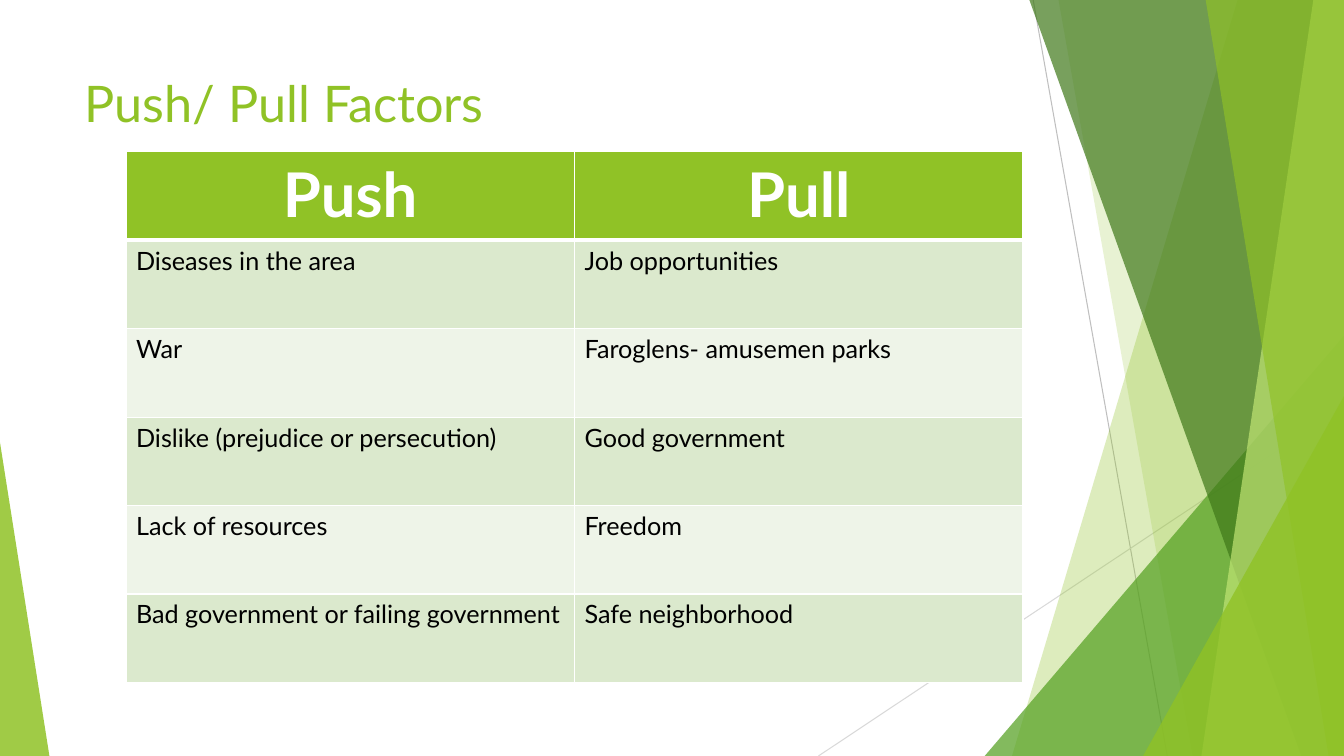
from pptx import Presentation
from pptx.dml.color import RGBColor
from pptx.enum.shapes import MSO_CONNECTOR, MSO_SHAPE
from pptx.enum.text import MSO_ANCHOR, MSO_AUTO_SIZE, PP_ALIGN
from pptx.oxml import parse_xml
from pptx.oxml.ns import nsdecls
from pptx.oxml.xmlchemy import OxmlElement
from pptx.util import Pt

WIDTH, HEIGHT = 960, 540
GREEN = "90C226"
FONT = "Lato"


def paint(fill, colour, opacity=100):
    """Apply a solid fill, with opacity in percent."""
    fill.solid()
    fill.fore_color.rgb = RGBColor.from_string(colour)
    if opacity < 100:
        alpha = OxmlElement("a:alpha")
        alpha.set("val", str(opacity * 1000))
        fill._xPr.find(".//{*}srgbClr").append(alpha)


def style_text(para, size, colour, bold=False):
    for run in para.runs:
        run.font.name = FONT
        run.font.size = Pt(size)
        run.font.bold = bold
        run.font.color.rgb = RGBColor.from_string(colour)


deck = Presentation()
deck.slide_width, deck.slide_height = Pt(WIDTH), Pt(HEIGHT)
page = deck.slides.add_slide(deck.slide_layouts[5])
shapes = page.shapes

# Thin background lines: start, end, colour
for x1, y1, x2, y2, colour in [
    (738, 0, 833.8, HEIGHT, "BFBFBF"),
    (WIDTH, 290.2, 584.6, HEIGHT, "D9D9D9"),
]:
    line = shapes.add_connector(
        MSO_CONNECTOR.STRAIGHT, Pt(x1), Pt(y1), Pt(x2), Pt(y2))
    line.line.width = Pt(0.75)
    line.line.color.rgb = RGBColor.from_string(colour)
    line._element.spPr.append(OxmlElement("a:effectLst"))

# Facets run from a slanted left edge (top x, bottom x) to the right page edge;
# triangles stand on the bottom edge (left, top, width, apex position).
decoration = [
    ("facet", (884.2, 722.9), GREEN, 30),
    ("facet", (756, 851.8), GREEN, 20),
    ("triangle", (703.4, 239.8, 256.6, 1), "54A021", 72),
    ("facet", (735.1, 929.5), "3F7819", 70),
    ("facet", (938.2, 858.2), "C0E474", 70),
    ("facet", (861.1, 949), GREEN, 65),
    ("triangle", (816.5, 283, 143.5, 1), GREEN, 80),
    ("triangle", (0, 316.1, 35.3, 0), GREEN, 85),
]
for kind, geometry, colour, opacity in decoration:
    if kind == "facet":
        top_x, bottom_x = geometry
        outline = shapes.build_freeform(Pt(top_x), Pt(-0.6))
        outline.add_line_segments([
            (Pt(WIDTH), Pt(-0.6)), (Pt(WIDTH), Pt(HEIGHT)), (Pt(bottom_x), Pt(HEIGHT))])
        shape = outline.convert_to_shape()
    else:
        left, top, width, apex = geometry
        shape = shapes.add_shape(
            MSO_SHAPE.ISOSCELES_TRIANGLE, Pt(left), Pt(top), Pt(width), Pt(HEIGHT - top))
        shape.adjustments[0] = apex
    paint(shape.fill, colour, opacity)
    shape.line.fill.background()
    shape.shadow.inherit = False

title = shapes.title
title.left, title.top, title.width, title.height = Pt(53.3), Pt(48.2), Pt(676.8), Pt(103.7)
frame = title.text_frame
frame.text = "Push/ Pull Factors"
frame.word_wrap = True
frame.auto_size = MSO_AUTO_SIZE.NONE
frame.vertical_anchor = MSO_ANCHOR.TOP
frame.paragraphs[0].alignment = PP_ALIGN.LEFT
style_text(frame.paragraphs[0], 36, GREEN)

factors = [
    ("Push", "Pull"),
    ("Diseases in the area", "Job opportunities"),
    ("War", "Faroglens- amusemen parks"),
    ("Dislike (prejudice or persecution)", "Good government"),
    ("Lack of resources", "Freedom"),
    ("Bad government or failing government", "Safe neighborhood"),
]
table = shapes.add_table(
    len(factors), 2, Pt(90), Pt(108.4), Pt(640.8), Pt(63.2 * len(factors))).table
for row_index, row in enumerate(factors):
    header = row_index == 0
    for column_index, text in enumerate(row):
        cell = table.cell(row_index, column_index)
        cell.text = text
        para = cell.text_frame.paragraphs[0]
        if header:
            para.alignment = PP_ALIGN.CENTER
            style_text(para, 44, "FFFFFF", bold=True)
        else:
            style_text(para, 18, "000000")
        properties = cell._tc.get_or_add_tcPr()
        for side in "LRTB":
            under_header = (row_index, side) in [(0, "B"), (1, "T")]
            properties.append(parse_xml(
                f'<a:ln{side} {nsdecls("a")} w="{Pt(3 if under_header else 1)}">'
                f'<a:solidFill><a:srgbClr val="FFFFFF"/></a:solidFill></a:ln{side}>'))
        band = "DBE9CD" if row_index % 2 else "EEF4E8"
        paint(cell.fill, GREEN if header else band)

deck.save("out.pptx")
